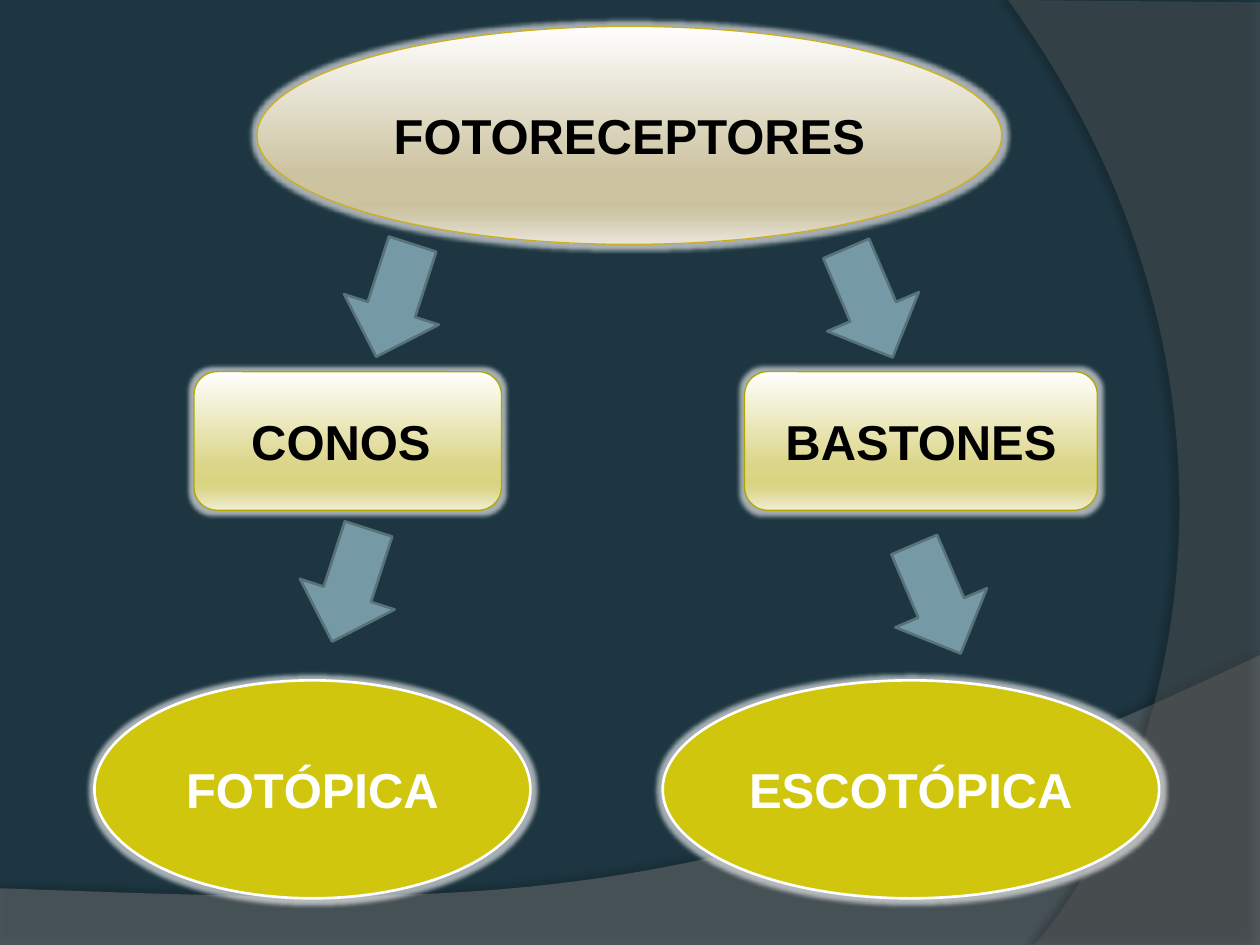
from lxml import etree
from pptx import Presentation
from pptx.dml.color import RGBColor
from pptx.enum.shapes import MSO_SHAPE as Shape
from pptx.enum.text import MSO_ANCHOR, PP_ALIGN
from pptx.oxml.ns import qn
from pptx.util import Inches, Pt


def rgb(value):
    return RGBColor.from_string(value)


def add_color(parent, value, alpha=100):
    """Append an a:srgbClr element, with opacity in percent."""
    color = etree.SubElement(parent, qn("a:srgbClr"), val=value)
    if alpha < 100:
        etree.SubElement(color, qn("a:alpha"), val=str(alpha * 1000))


deck = Presentation()
deck.slide_width, deck.slide_height = Inches(10), Inches(7.5)
page = deck.slides.add_slide(deck.slide_layouts[6])
page.background.fill.solid()
page.background.fill.fore_color.rgb = rgb("1D3641")

# Background waves: straight corners, then one Bezier curve given by
# its four control points. Shadow: opacity, distance, direction.
waves = [
    ([(0, 7.05), (0, 7.5), (10, 7.5), (10, 5.2)],
     [(10, 5.2), (5.59, 7.29), (3.91, 7.19), (0, 7.05)],
     "7F7F7F", 45, (35, 3.5, 270)),
    ([(8, 0), (10, 0.02), (10, 7.5), (8.21, 7.5)],
     [(8.21, 7.5), (9.35, 6.19), (10.18, 3), (8, 0)],
     "5E5E5E", 40, (45, 4, 180)),
]
STEPS = 60
for corners, controls, color, alpha, (shade, distance, angle) in waves:
    points = list(corners)
    for step in range(1, STEPS):
        t = step / STEPS
        weights = ((1 - t) ** 3, 3 * t * (1 - t) ** 2, 3 * t * t * (1 - t), t ** 3)
        points.append(tuple(sum(w * c[axis] for w, c in zip(weights, controls))
                            for axis in (0, 1)))
    points = [(Inches(x), Inches(y)) for x, y in points]
    builder = page.shapes.build_freeform(*points[0])
    builder.add_line_segments(points[1:], close=True)
    wave = builder.convert_to_shape()
    wave.shadow.inherit = False
    wave.line.fill.background()
    wave.fill.solid()
    wave.fill.fore_color.rgb = rgb(color)
    props = wave._element.spPr
    fill_color = props.find(qn("a:solidFill")).find(qn("a:srgbClr"))
    etree.SubElement(fill_color, qn("a:alpha"), val=str(alpha * 1000))
    shadow = etree.SubElement(
        props.find(qn("a:effectLst")), qn("a:outerShdw"), blurRad=str(Pt(4)),
        dist=str(Pt(distance)), dir=str(angle * 60000), rotWithShape="0")
    add_color(shadow, "000000", shade)

# Styles: gradient stops or one plain colour, line colour, line width, text colour
positions = (0, 68, 81, 86, 100)
beige = (("FEFEFE", "CCC3A0", "CAC19D", "CFC6A7", "EAE6DB"), "CFAE1E", 0.75, "000000")
cream = (("FFFFFE", "DBD587", "DAD482", "DDD790", "F0EDD3"), "B0A800", 0.75, "000000")
olive = ("CFC60D", "FFFFFF", 1.5, "FFFFFF")
nodes = [
    ("FOTORECEPTORES", Shape.OVAL, 2.04, 0.21, 5.91, 1.73, beige),
    ("CONOS ", Shape.ROUNDED_RECTANGLE, 1.54, 2.95, 2.44, 1.1, cream),
    ("BASTONES", Shape.ROUNDED_RECTANGLE, 5.91, 2.95, 2.8, 1.1, cream),
    ("FOTÓPICA", Shape.OVAL, 0.75, 5.4, 3.46, 1.73, olive),
    ("ESCOTÓPICA", Shape.OVAL, 5.26, 5.4, 3.94, 1.73, olive),
]
for text, kind, left, top, width, height, style in nodes:
    fill, line_color, line_width, text_color = style
    node = page.shapes.add_shape(kind, Inches(left), Inches(top),
                                 Inches(width), Inches(height))
    node.shadow.inherit = False
    props = node._element.spPr
    if fill in ("CFC60D",):
        node.fill.solid()
        node.fill.fore_color.rgb = rgb(fill)
    else:
        node.fill.gradient()
        node.fill.gradient_angle = 270
        stops = props.find(qn("a:gradFill")).find(qn("a:gsLst"))
        for stop in list(stops):
            stops.remove(stop)
        for position, color in zip(positions, fill):
            stop = etree.SubElement(stops, qn("a:gs"), pos=str(position * 1000))
            add_color(stop, color)
    node.line.color.rgb = rgb(line_color)
    node.line.width = Pt(line_width)
    glow = etree.SubElement(props.find(qn("a:effectLst")), qn("a:glow"),
                            rad=str(Pt(5)))
    add_color(glow, "FFFFFF", 60)

    frame = node.text_frame
    frame.word_wrap = True
    frame.vertical_anchor = MSO_ANCHOR.MIDDLE
    para = frame.paragraphs[0]
    para.text = text
    para.alignment = PP_ALIGN.CENTER
    font = para.runs[0].font
    font.name, font.size, font.bold = "Arial", Pt(28), True
    font.color.rgb = rgb(text_color)

arrows = [(6.97, 4.36, 66.9), (2.66, 1.99, 107.9),
          (2.31, 4.25, 107.9), (6.43, 2.01, 66.9)]
for left, top, rotation in arrows:
    arrow = page.shapes.add_shape(Shape.RIGHT_ARROW, Inches(left), Inches(top),
                                  Inches(0.94), Inches(0.79))
    arrow.rotation = rotation
    arrow.shadow.inherit = False
    arrow.fill.solid()
    arrow.fill.fore_color.rgb = rgb("759AA5")
    arrow.line.color.rgb = rgb("57727A")
    arrow.line.width = Pt(1.5)

deck.save("out.pptx")
